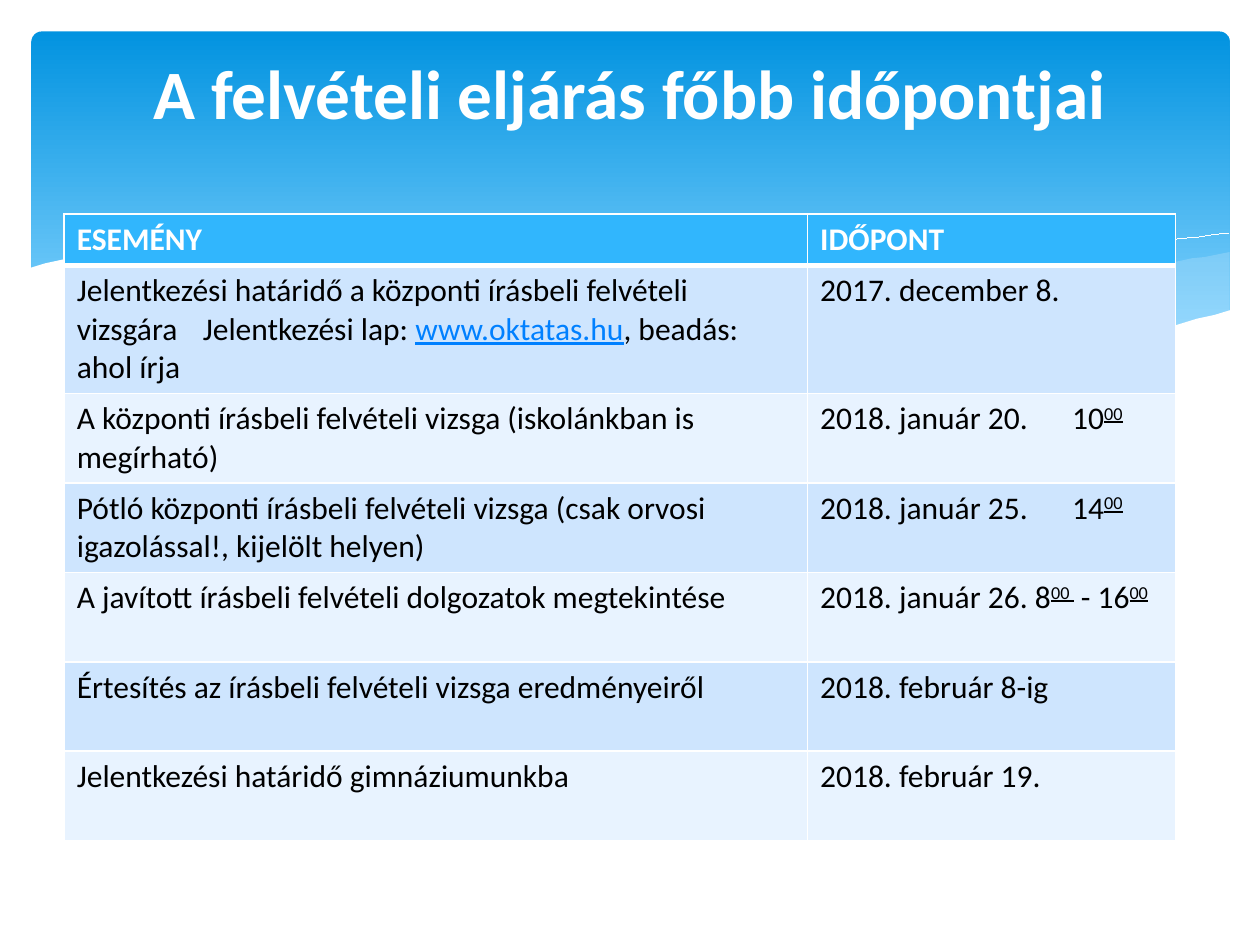
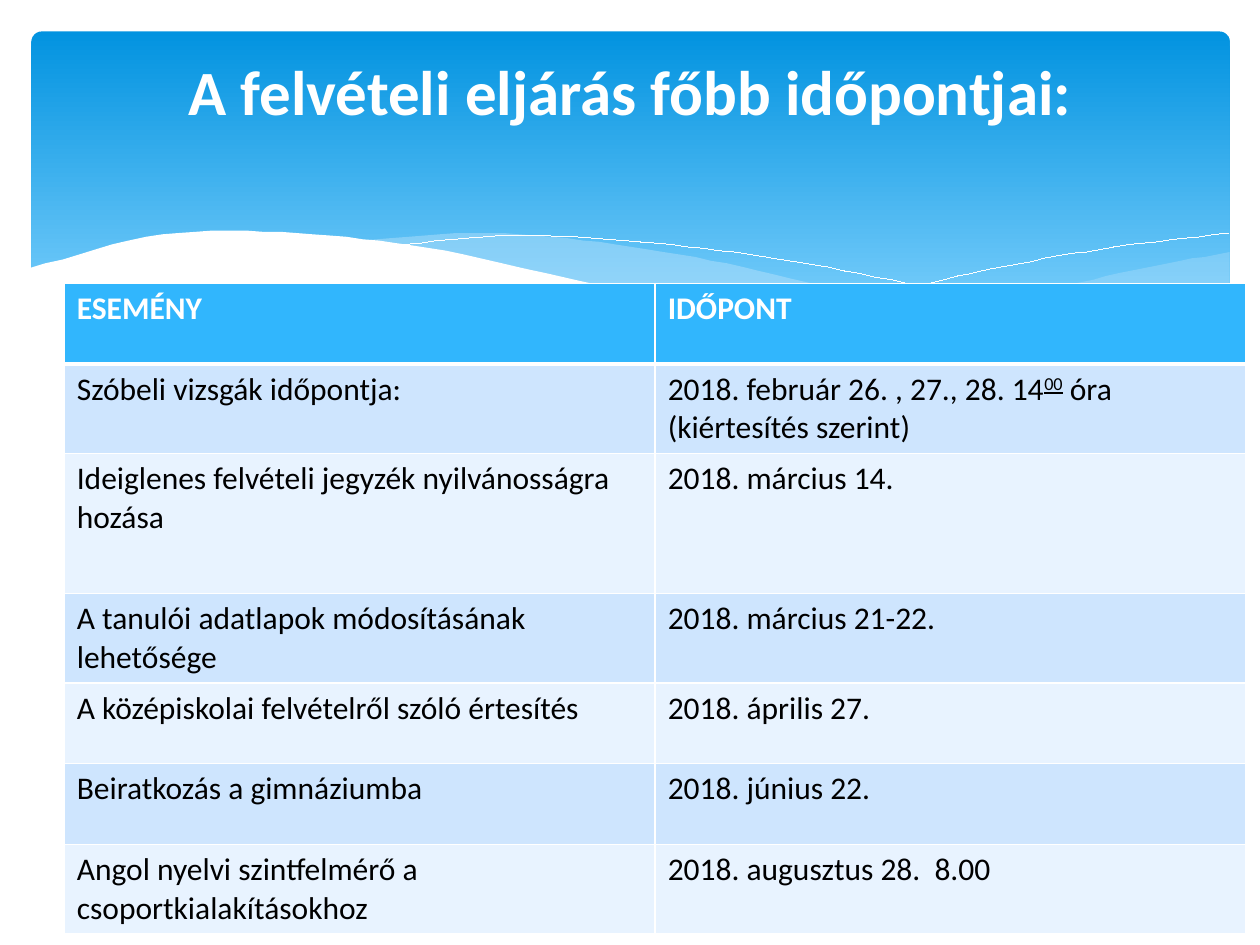
import lxml.etree
import pptx
import pptx.dml.color
import pptx.enum.shapes
import pptx.enum.text
import pptx.oxml.ns
import pptx.util

PX = 9144
STEPS = 8
WHITE, BLACK = "FFFFFF", "000000"
DEEP, PALE, MIST = "0293E0", "83D3FE", "C6E7FC"
HEAD, LINK = "31B6FD", "0080FF"
BANDS = ("CEE5FE", "E8F3FF")
BODY = {"name": "Calibri", "size": pptx.util.Pt(18), "bold": False}
BOLD = {**BODY, "bold": True}
UNDER = {**BODY, "underline": True}

HEADER = ("ESEMÉNY", "IDŐPONT")
FIRST = [
    HEADER,
    ("Jelentkezési határidő a központi írásbeli felvételi vizsgára\t"
     "Jelentkezési lap: ^www.oktatas.hu^, beadás: ahol írja",
     "2017. december 8."),
    ("A központi írásbeli felvételi vizsga (iskolánkban is megírható)",
     "2018. január 20.\t10^00"),
    ("Pótló központi írásbeli felvételi vizsga "
     "(csak orvosi igazolással!, kijelölt helyen)",
     "2018. január 25.\t14^00"),
    ("A javított írásbeli felvételi dolgozatok megtekintése",
     "2018. január 26. 8^00 ^ - 16^00"),
    ("Értesítés az írásbeli felvételi vizsga eredményeiről",
     "2018. február 8-ig"),
    ("Jelentkezési határidő gimnáziumunkba", "2018. február 19.")]
SECOND = [
    HEADER,
    ("Szóbeli vizsgák időpontja:",
     "2018. február 26. , 27., 28. 14^00^ óra\n(kiértesítés szerint)"),
    ("Ideiglenes felvételi jegyzék nyilvánosságra hozása",
     "2018. március 14."),
    ("A tanulói adatlapok módosításának lehetősége",
     "2018. március 21-22."),
    ("A középiskolai felvételről szóló értesítés", "2018. április 27."),
    ("Beiratkozás a gimnáziumba", "2018. június 22."),
    ("Angol nyelvi szintfelmérő a csoportkialakításokhoz",
     "2018. augusztus 28.  8.00")]


def tint(code):
    return pptx.dml.color.RGBColor.from_string(code)


def node(base, tag, **marks):
    return lxml.etree.SubElement(base, pptx.oxml.ns.qn(tag), marks)


def dress(item, look):
    for key, value in look.items():
        setattr(item, key, value)


def ink(font, look, code):
    dress(font, look)
    font.color.rgb = tint(code)


def paint(fill, code):
    fill.solid()
    fill.fore_color.rgb = tint(code)


def blend(a, b, c, d, t):
    bend = 2 * a - 5 * b + 4 * c - d
    twist = 3 * b - a - 3 * c + d
    return b + t * (c - a + t * (bend + t * twist)) / 2


def curve(left, right, heights):
    """Smooth points through heights set at equal gaps from left to right."""
    start = 2 * heights[0] - heights[1]
    end = 2 * heights[-1] - heights[-2]
    knots = [start, *heights, end]
    total = (len(heights) - 1) * STEPS
    points = []
    for step in range(total):
        span, part = divmod(step, STEPS)
        x = left + (right - left) * step / total
        points.append((x, blend(*knots[span:span + 4], part / STEPS)))
    return points + [(right, heights[-1])]


def lens(left, right, upper, lower):
    return curve(left, right, upper) + curve(left, right, lower)[::-1]


def add_band(shapes):
    kind = pptx.enum.shapes.MSO_SHAPE.ROUNDED_RECTANGLE
    band = shapes.add_shape(kind, 25 * PX, 25 * PX, 951 * PX, 270 * PX)
    band.adjustments[0] = 0.03
    band.shadow.inherit = False
    band.line.fill.background()
    band.fill.gradient()
    band.fill.gradient_angle = 270
    stops = zip(band.fill.gradient_stops, ((DEEP, 0), (PALE, 0.9)))
    for stop, (code, place) in stops:
        stop.color.rgb = tint(code)
        stop.position = place


def trace(shapes, points, close):
    pen = shapes.build_freeform(*points[0], scale=PX)
    pen.add_line_segments(points[1:], close=close)
    shape = pen.convert_to_shape()
    shape.shadow.inherit = False
    return shape


def add_wave(shapes, points, code, solid=100):
    wave = trace(shapes, points, True)
    wave.line.fill.background()
    paint(wave.fill, code)
    if solid < 100:
        tone = wave.fill._xPr.find(".//" + pptx.oxml.ns.qn("a:srgbClr"))
        node(tone, "a:alpha", val=str(solid * 1000))


def add_thread(shapes, points):
    thread = trace(shapes, points, False)
    thread.fill.background()
    paint(thread.line.fill, WHITE)
    thread.line._get_or_add_ln().set("w", "0")


def add_scene(slide, layout):
    shapes = slide.shapes
    add_band(shapes)
    right = lens(661, 976, (265, 250, 233, 215, 200),
                 (265, 274, 278, 271, 247))
    middle = lens(286, 893, (191, 185, 194, 212, 236, 257, 273),
                  (191, 207, 231, 253, 270, 278, 273))
    fall = curve(309, 907, (195, 187, 192, 204, 222, 244, 272))
    rise = curve(613, 975, (257, 233, 212, 196, 185))
    front = curve(23, 977, (213, 186, 185, 197, 220, 245, 264, 275, 273, 246))
    add_wave(shapes, right, MIST, 29)
    add_wave(shapes, middle, MIST, 40)
    add_thread(shapes, fall)
    add_thread(shapes, rise)
    add_wave(shapes, front + [(977, 329), (23, 329)], WHITE)
    share(shapes, layout)


def share(shapes, layout):
    scene = [shape for shape in shapes if not shape.is_placeholder]
    for count, shape in enumerate(scene, 100):
        shape._element.nvSpPr.cNvPr.set("id", str(count))
        layout.shapes._spTree.append(shape._element)


def set_title(slide, text, size, top):
    title = slide.shapes.title
    dress(title, {"left": 50 * PX, "top": 37 * PX,
                  "width": 900 * PX, "height": 137 * PX})
    frame = title.text_frame
    dress(frame, {"text": text, "word_wrap": True, "margin_top": top * PX,
                  "auto_size": pptx.enum.text.MSO_AUTO_SIZE.NONE,
                  "vertical_anchor": pptx.enum.text.MSO_ANCHOR.TOP})
    line = frame.paragraphs[0]
    line.alignment = pptx.enum.text.PP_ALIGN.CENTER
    ink(line.runs[0].font, {**BOLD, "size": pptx.util.Pt(size)}, WHITE)


def edge(cell, above, below):
    props = cell._tc.get_or_add_tcPr()
    for side, width in zip("LRTB", (1, 1, above, below)):
        rule = node(props, "a:ln" + side, w=str(pptx.util.Pt(width)))
        node(node(rule, "a:solidFill"), "a:srgbClr", val=WHITE)


def add_run(line, text, look, code, raised=False):
    run = line.add_run()
    run.text = text
    ink(run.font, look, code)
    if raised:
        run._r.get_or_add_rPr().set("baseline", "30000")


def fill_cell(cell, text, look, code):
    frame = cell.text_frame
    for count, words in enumerate(text.split("\n")):
        line = frame.add_paragraph() if count else frame.paragraphs[0]
        for turn, part in enumerate(words.split("^")):
            if turn % 2 == 0:
                add_run(line, part, look, code)
            elif part.startswith("www"):
                add_run(line, part, UNDER, LINK)
            else:
                add_run(line, part, UNDER, code, raised=True)


def add_grid(slide, top, cols, heights, rows):
    frame = slide.shapes.add_table(
        len(rows), len(cols), 51 * PX, top * PX,
        sum(cols) * PX, sum(heights) * PX)
    table = frame.table
    for col, width in zip(table.columns, cols):
        col.width = width * PX
    for index, (row, height) in enumerate(zip(table.rows, heights)):
        row.height = height * PX
        head = index == 0
        back = HEAD if head else BANDS[(index - 1) % 2]
        look, code = (BOLD, WHITE) if head else (BODY, BLACK)
        for cell, text in zip(row.cells, rows[index]):
            edge(cell, 3 if index == 1 else 1, 3 if head else 1)
            paint(cell.fill, back)
            fill_cell(cell, text, look, code)


def main():
    deck = pptx.Presentation()
    dress(deck, {"slide_width": 1000 * PX, "slide_height": 750 * PX})
    layout = deck.slide_layouts[5]
    slide = deck.slides.add_slide(layout)
    add_scene(slide, layout)
    set_title(slide, "A felvételi eljárás főbb időpontjai", 39.6, 3)
    add_grid(slide, 170, (590, 292), [40, 100] + [71] * 5, FIRST)
    slide = deck.slides.add_slide(layout)
    set_title(slide, "A felvételi eljárás főbb időpontjai:", 36, 5)
    add_grid(slide, 225, (469, 469), [64, 64, 111] + [64] * 4, SECOND)
    deck.save("out.pptx")


if __name__ == "__main__":
    main()
